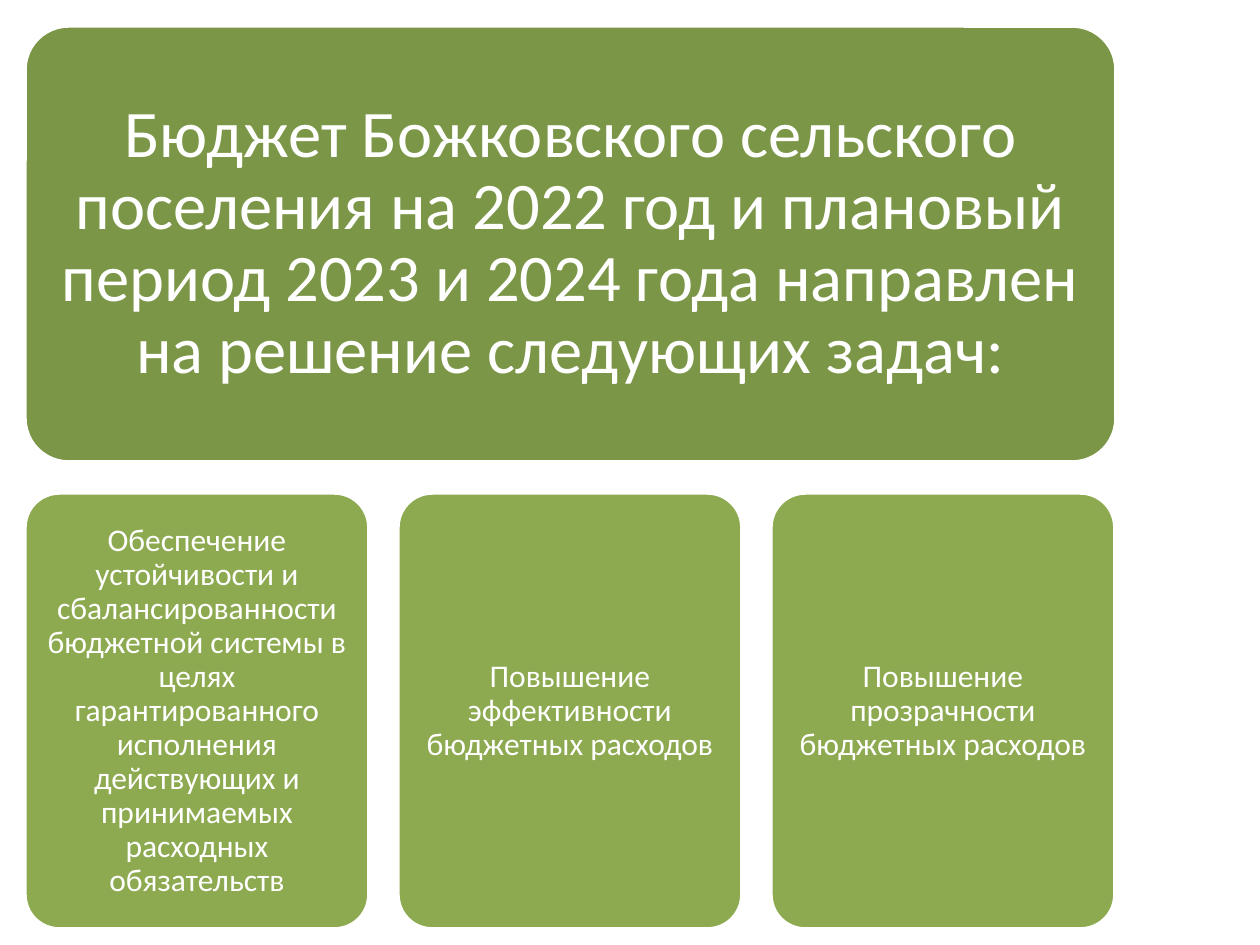
from pptx import Presentation
from pptx.dml.color import RGBColor
from pptx.enum.shapes import MSO_SHAPE
from pptx.enum.text import MSO_ANCHOR, MSO_AUTO_SIZE, PP_ALIGN
from pptx.util import Emu, Pt

PX = 914400 // 126
COLORS = {"heading": "7C9647", "task": "8DAA51", "white": "FFFFFF"}
HEADING = ("Бюджет Божковского сельского поселения на 2022 год и плановый период "
           "2023 и 2024 года направлен на решение следующих задач:")
TASKS = [
    "Обеспечение устойчивости и сбалансированности бюджетной системы в целях "
    "гарантированного исполнения действующих и принимаемых расходных обязательств",
    "Повышение эффективности бюджетных расходов",
    "Повышение прозрачности бюджетных расходов",
]
LEFT, HEADING_TOP, TASK_TOP = 25, 26, 493
HEADING_WIDTH, TASK_WIDTH, CARD_HEIGHT = 1091, 344, 436
TASK_STEP = (HEADING_WIDTH - TASK_WIDTH) // (len(TASKS) - 1)
HEADING_PADDING = 13


class SlideBuilder:
    font = "Calibri"

    def __init__(self, slide):
        self.slide = slide

    def color(self, name):
        return RGBColor.from_string(COLORS[name])

    def card(self, left, top, width, height, fill):
        shape = self.slide.shapes.add_shape(
            MSO_SHAPE.ROUNDED_RECTANGLE,
            *(Emu(value * PX) for value in (left, top, width, height)))
        shape.adjustments[0] = 0.1
        shape.shadow.inherit = False
        shape.fill.solid()
        shape.fill.fore_color.rgb = self.color(fill)
        shape.line.color.rgb = self.color("white")
        shape.line.width = Pt(2)
        return shape

    def title(self, left, top, width, height, text, size, inset):
        """Place the title placeholder in front of everything drawn so far."""
        title = self.slide.shapes.title
        title.left, title.top, title.width, title.height = (
            Emu(value * PX) for value in (left, top, width, height))
        self.slide.shapes._spTree.append(title._element)
        self.set_text(title, text, size, inset)

    def set_text(self, shape, text, size, inset):
        frame = shape.text_frame
        frame.text = text
        frame.word_wrap = True
        frame.auto_size = MSO_AUTO_SIZE.NONE
        frame.vertical_anchor = MSO_ANCHOR.MIDDLE
        frame.margin_left = frame.margin_right = Emu(inset * PX)
        frame.margin_top = frame.margin_bottom = Emu(inset * PX)
        paragraph = frame.paragraphs[0]
        paragraph.alignment = PP_ALIGN.CENTER
        paragraph.line_spacing = 0.9
        font = paragraph.runs[0].font
        font.name = self.font
        font.size = Pt(size)
        font.color.rgb = self.color("white")


def main():
    presentation = Presentation()
    presentation.slide_width = Emu(1260 * PX)
    presentation.slide_height = Emu(945 * PX)
    builder = SlideBuilder(presentation.slides.add_slide(presentation.slide_layouts[5]))

    builder.card(LEFT, HEADING_TOP, HEADING_WIDTH, CARD_HEIGHT, "heading")
    builder.title(LEFT + HEADING_PADDING, HEADING_TOP + HEADING_PADDING,
                  HEADING_WIDTH - 2 * HEADING_PADDING,
                  CARD_HEIGHT - 2 * HEADING_PADDING, HEADING, size=38, inset=20)
    for index, task in enumerate(TASKS):
        card = builder.card(LEFT + index * TASK_STEP, TASK_TOP,
                            TASK_WIDTH, CARD_HEIGHT, "task")
        builder.set_text(card, task, size=18, inset=9)

    presentation.save("out.pptx")


if __name__ == "__main__":
    main()
